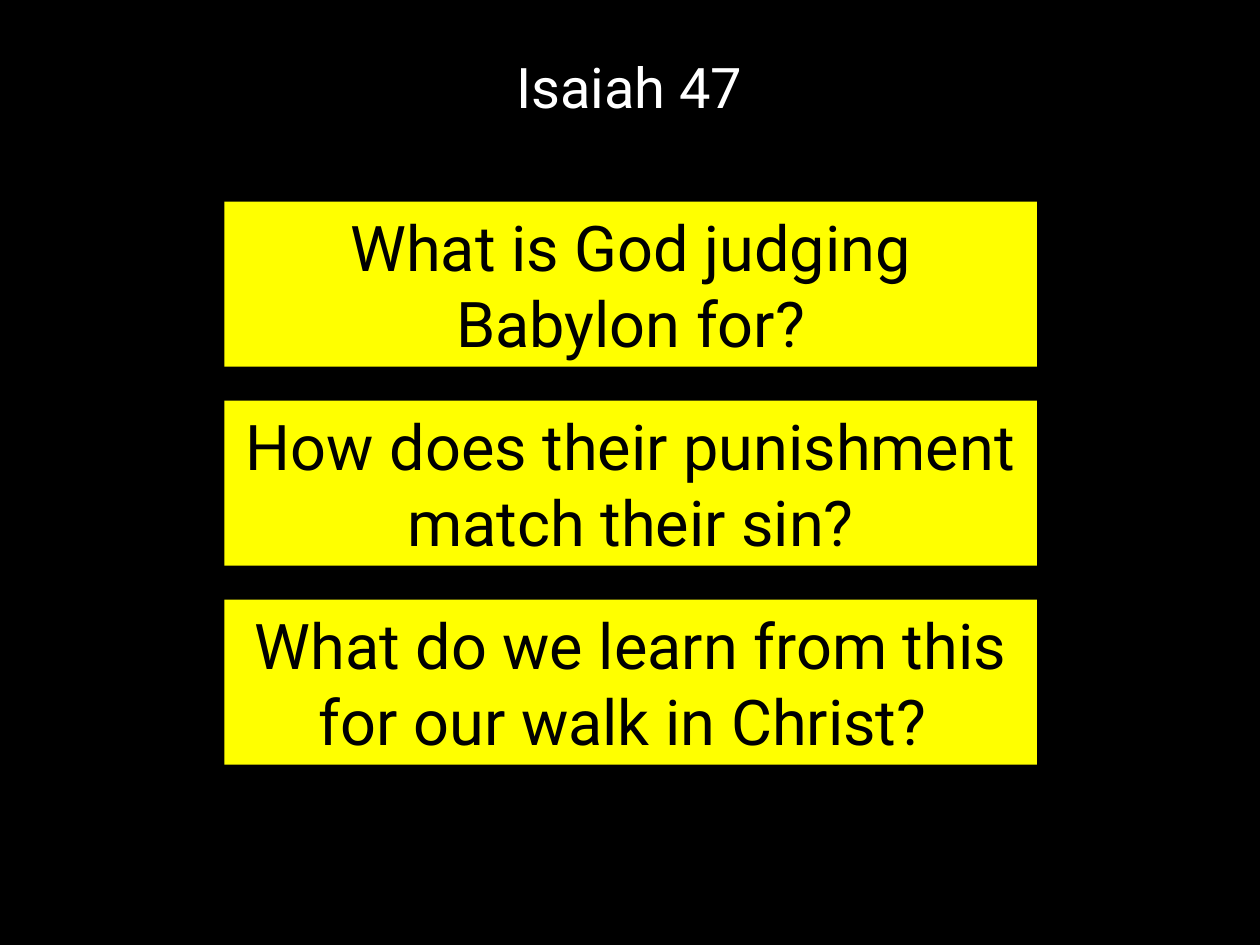
import pptx
import pptx.util
import pptx.dml.color
import pptx.enum.shapes
import pptx.enum.text

Inches = pptx.util.Inches
RGBColor = pptx.dml.color.RGBColor
Anchor = pptx.enum.text.MSO_ANCHOR

BLACK = RGBColor(0x00, 0x00, 0x00)
WHITE = RGBColor(0xFF, 0xFF, 0xFF)
YELLOW = RGBColor(0xFF, 0xFF, 0x00)

ASKS = [
    "What is God judging Babylon for?",
    "How does their punishment match their sin?",
    "What do we learn from this for our walk in Christ? ",
]
TOP, STEP = 1.6, 1.58


class Deck:
    font = "Roboto"

    def __init__(self, slide):
        self.slide = slide
        fill = slide.background.fill
        fill.solid()
        fill.fore_color.rgb = BLACK

    def label(self, frame, text, size, color):
        frame.word_wrap = True
        frame.vertical_anchor = Anchor.MIDDLE
        par = frame.paragraphs[0]
        par.alignment = pptx.enum.text.PP_ALIGN.CENTER
        run = par.add_run()
        run.text = text
        run.font.name = self.font
        run.font.size = pptx.util.Pt(size)
        run.font.color.rgb = color
        return par

    def title(self, text, left, top, width, height):
        box = self.slide.shapes.add_textbox(
            Inches(left), Inches(top), Inches(width), Inches(height))
        par = self.label(box.text_frame, text, 32, WHITE)
        par.line_spacing = 0.9

    def panel(self, text, left, top, width, height):
        box = self.slide.shapes.add_shape(
            pptx.enum.shapes.MSO_SHAPE.RECTANGLE,
            Inches(left), Inches(top), Inches(width), Inches(height))
        box.shadow.inherit = False
        box.fill.solid()
        box.fill.fore_color.rgb = YELLOW
        box.line.fill.background()
        self.label(box.text_frame, text, 36, BLACK)
        box.text_frame.auto_size = pptx.enum.text.MSO_AUTO_SIZE.SHAPE_TO_FIT_TEXT


def main():
    show = pptx.Presentation()
    show.slide_width, show.slide_height = Inches(10), Inches(7.5)
    deck = Deck(show.slides.add_slide(show.slide_layouts[6]))
    deck.title("Isaiah 47", 0.53, 0.4, 8.93, 0.63)
    for row, ask in enumerate(ASKS):
        deck.panel(ask, 1.78, TOP + row * STEP, 6.45, 1.31)
    show.save("out.pptx")


if __name__ == "__main__":
    main()
